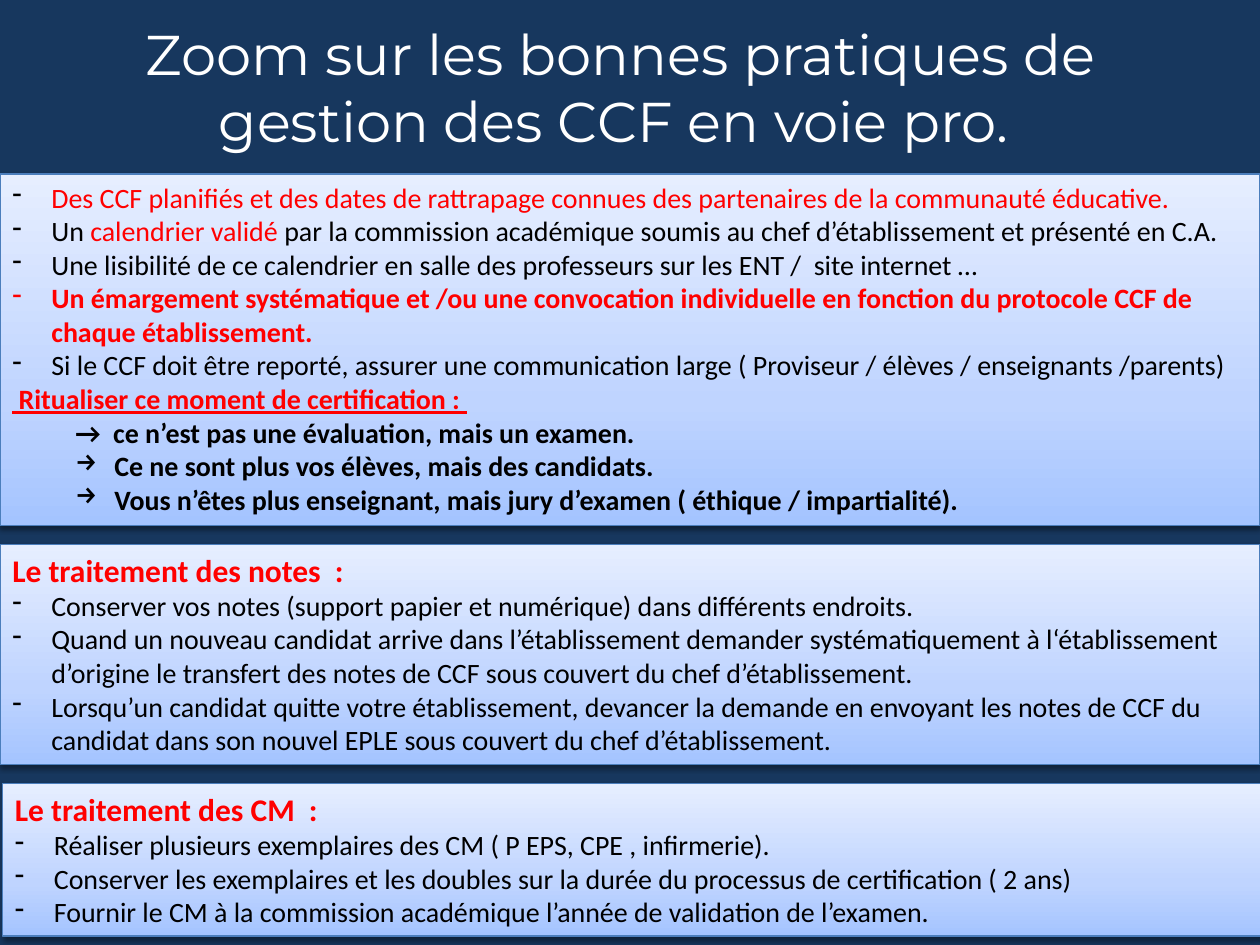
from lxml.etree import SubElement
from pptx import Presentation
from pptx.dml.color import RGBColor
from pptx.enum.shapes import MSO_SHAPE
from pptx.enum.text import MSO_ANCHOR, MSO_AUTO_SIZE, PP_ALIGN
from pptx.oxml import parse_xml
from pptx.oxml.ns import nsdecls, qn
from pptx.util import Inches, Pt

BLACK, RED, WHITE = "000000", "FF0000", "FFFFFF"
HANGING = 0.31
GRADIENT = ((0, "A4C4FF"), (35, "BFD4FF"), (100, "E6EEFF"))

# Run formats
PLAIN = {"size": Pt(16), "name": "Calibri", "color": BLACK}
ALERT = {**PLAIN, "color": RED}
STRONG = {**PLAIN, "bold": True}
STRONG_ALERT = {**ALERT, "bold": True}
RITUAL = {**STRONG_ALERT, "underline": True}
HEADING = {**STRONG_ALERT, "size": Pt(18)}
TITLE = {"size": Pt(32), "name": "Montserrat", "color": WHITE}


def rgb(value):
    return RGBColor.from_string(value)


def add_run(paragraph, text, style):
    run = paragraph.add_run()
    run.text = text
    for attribute, value in style.items():
        if attribute == "color":
            run.font.color.rgb = rgb(value)
        else:
            setattr(run.font, attribute, value)


def set_indent(paragraph, margin, bullet=None, bullet_color=None):
    properties = paragraph._p.get_or_add_pPr()
    properties.set("marL", str(Inches(margin)))
    properties.set("indent", str(Inches(-HANGING if bullet else 0)))
    if bullet_color:
        color = SubElement(properties, qn("a:buClr"))
        SubElement(color, qn("a:srgbClr")).set("val", bullet_color)
    if bullet:
        SubElement(properties, qn("a:buChar")).set("char", bullet)


def line(*runs, margin=0, bullet=None, bullet_color=None, level=0):
    return runs, level, (margin, bullet, bullet_color)


def dash(*runs, bullet_color=None):
    return line(*runs, margin=HANGING, bullet="-", bullet_color=bullet_color)


def arrow(text):
    return line((text, STRONG), margin=0.5 + HANGING, bullet="→", level=1)


def add_title(slide, text):
    box = slide.shapes.add_textbox(Inches(0.43), Inches(0.06), Inches(9), Inches(1.25))
    frame = box.text_frame
    frame.word_wrap = True
    frame.vertical_anchor = MSO_ANCHOR.MIDDLE
    frame.paragraphs[0].alignment = PP_ALIGN.CENTER
    add_run(frame.paragraphs[0], text, TITLE)


def add_panel(slide, left, top, height, lines):
    panel = slide.shapes.add_shape(
        MSO_SHAPE.RECTANGLE, Inches(left), Inches(top), Inches(10), Inches(height))
    panel.line.color.rgb = rgb("4B7EBC")
    panel.line.width = Pt(0.75)

    # Gradient from bottom to top, and a soft shadow below
    stops = "".join(
        f'<a:gs pos="{position * 1000}"><a:srgbClr val="{color}"/></a:gs>'
        for position, color in GRADIENT)
    panel.line._ln.addprevious(parse_xml(
        f'<a:gradFill {nsdecls("a")} rotWithShape="1"><a:gsLst>{stops}</a:gsLst>'
        '<a:lin ang="16200000" scaled="0"/></a:gradFill>'))
    panel.line._ln.addnext(parse_xml(
        f'<a:effectLst {nsdecls("a")}><a:outerShdw blurRad="{Pt(3.1)}" '
        f'dist="{Pt(1.6)}" dir="5400000" rotWithShape="0"><a:srgbClr val="{BLACK}">'
        '<a:alpha val="38000"/></a:srgbClr></a:outerShdw></a:effectLst>'))

    # Text
    frame = panel.text_frame
    frame.word_wrap = True
    frame.auto_size = MSO_AUTO_SIZE.SHAPE_TO_FIT_TEXT
    frame.vertical_anchor = MSO_ANCHOR.TOP
    for index, (runs, level, indent) in enumerate(lines):
        paragraph = frame.add_paragraph() if index else frame.paragraphs[0]
        paragraph.alignment = PP_ALIGN.LEFT
        paragraph.level = level
        set_indent(paragraph, *indent)
        for text, style in runs:
            add_run(paragraph, text, style)


def add_topic(slide, left, top, height, heading, items):
    lines = [line((heading, HEADING))] + [dash((item, PLAIN)) for item in items]
    add_panel(slide, left, top, height, lines)


def main():
    deck = Presentation()
    deck.slide_width, deck.slide_height = Inches(10), Inches(7.5)
    slide = deck.slides.add_slide(deck.slide_layouts[6])
    slide.background.fill.solid()
    slide.background.fill.fore_color.rgb = rgb("17375E")

    add_title(slide, "Zoom sur les bonnes pratiques de gestion des CCF en voie pro. ")

    # Planning and the certification ritual
    add_panel(slide, 0, 1.38, 2.79, [
        dash(("Des CCF planifiés et des dates de rattrapage connues des partenaires "
              "de la communauté éducative.", ALERT), bullet_color=BLACK),
        dash(("Un ", PLAIN), ("calendrier validé ", ALERT),
             ("par la commission académique soumis au chef d’établissement "
              "et présenté en C.A.", PLAIN)),
        dash(("Une lisibilité de ce calendrier en salle des professeurs sur les ENT /  "
              "site internet …", PLAIN)),
        dash(("Un émargement systématique et /ou une convocation individuelle en fonction "
              "du protocole CCF de chaque établissement.", STRONG_ALERT)),
        dash(("Si le CCF doit être reporté, assurer une communication large "
              "( Proviseur / élèves / enseignants /parents)", PLAIN)),
        line((" Ritualiser ce moment de certification : ", RITUAL)),
        line(("→  ce n’est pas une évaluation, mais un examen.", STRONG),
             margin=0.5, level=1),
        arrow("Ce ne sont plus vos élèves, mais des candidats."),
        arrow("Vous n’êtes plus enseignant, mais jury d’examen ( éthique / impartialité)."),
    ])

    # Marks
    add_topic(slide, 0, 4.32, 1.75, "Le traitement des notes  :", [
        "Conserver vos notes (support papier et numérique) dans différents endroits.",
        "Quand un nouveau candidat arrive dans l’établissement demander systématiquement "
        "à l‘établissement d’origine le transfert des notes de CCF sous couvert du chef "
        "d’établissement.",
        "Lorsqu’un candidat quitte votre établissement, devancer la demande en envoyant "
        "les notes de CCF du candidat dans son nouvel EPLE sous couvert du chef "
        "d’établissement.",
    ])

    # Medical certificates
    add_topic(slide, 0.02, 6.22, 1.21, "Le traitement des CM  :", [
        "Réaliser plusieurs exemplaires des CM ( P EPS, CPE , infirmerie).",
        "Conserver les exemplaires et les doubles sur la durée du processus de "
        "certification ( 2 ans)",
        "Fournir le CM à la commission académique l’année de validation de l’examen.",
    ])

    deck.save("out.pptx")


if __name__ == "__main__":
    main()
